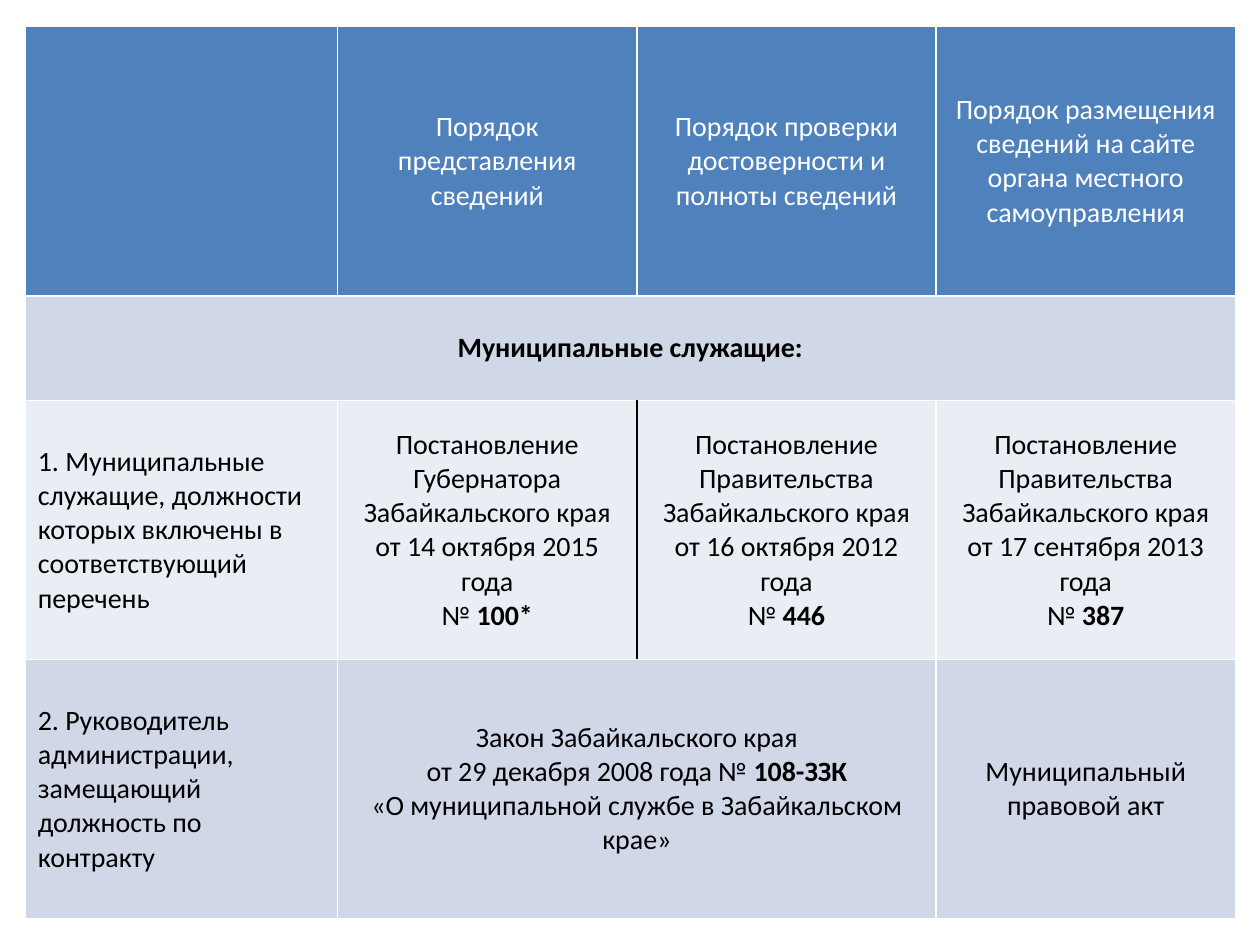
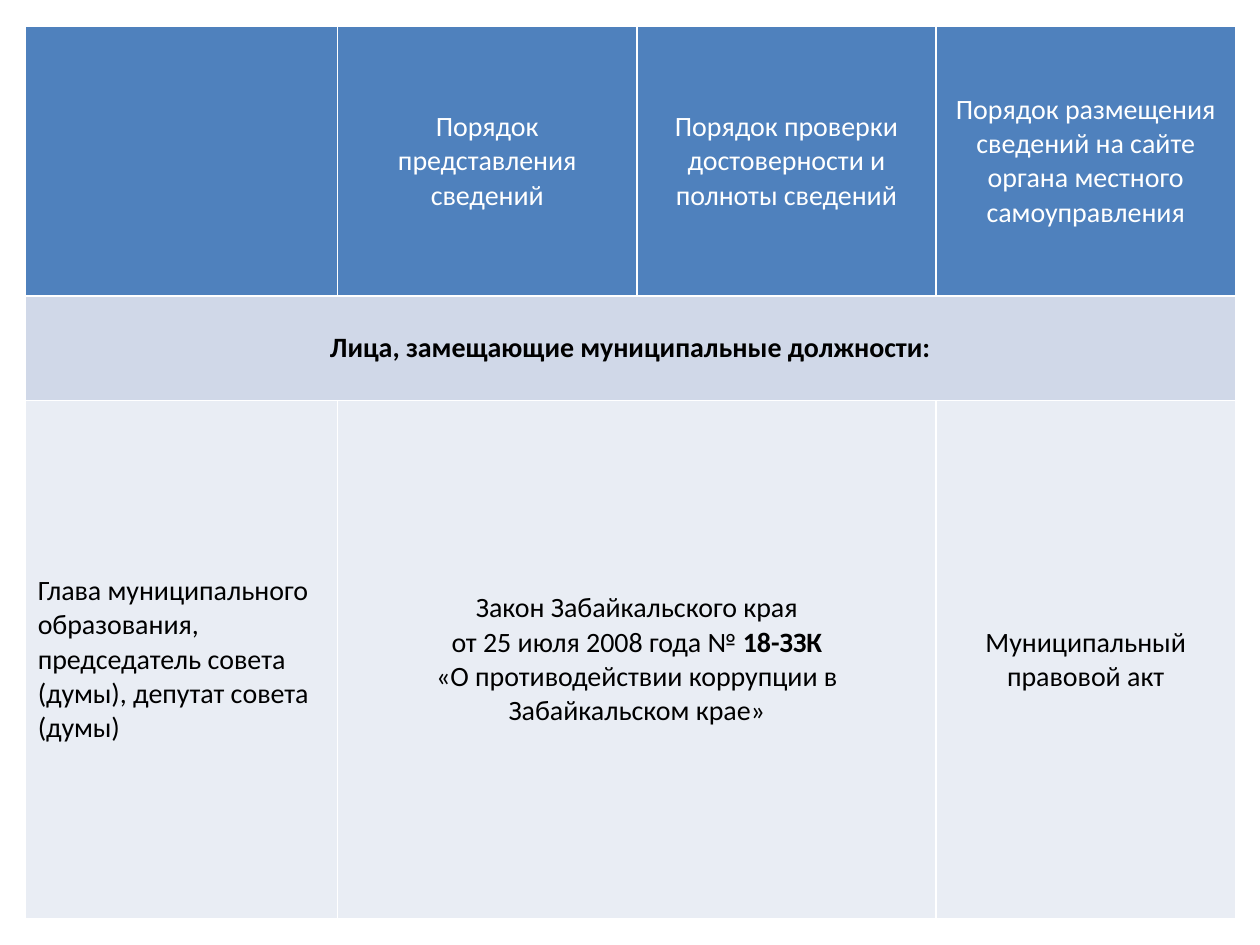
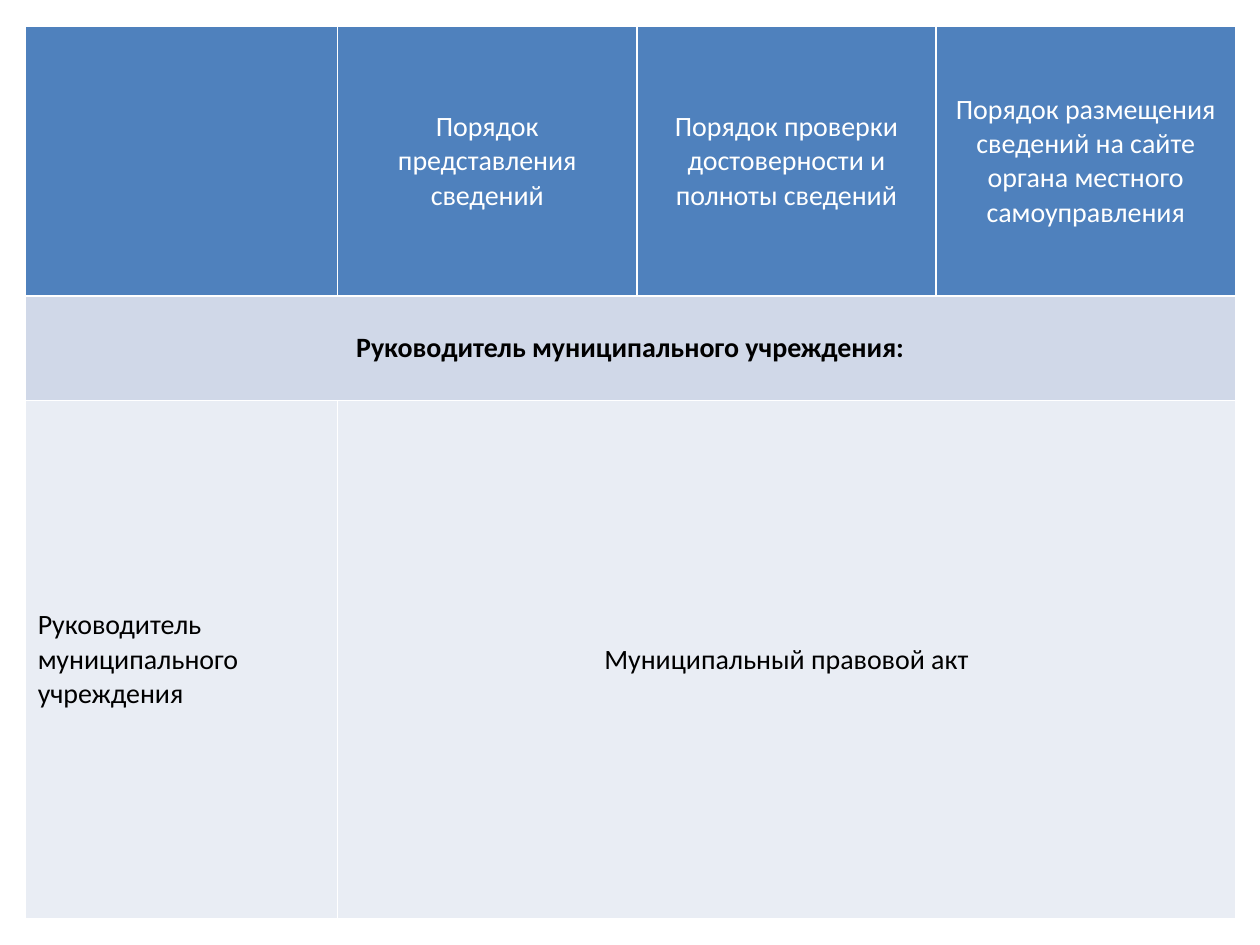
from dataclasses import dataclass

import lxml.etree
import pptx
import pptx.dml.color
import pptx.enum.text
import pptx.oxml.ns
import pptx.presentation
import pptx.table
import pptx.util
from pptx.util import Inches

COLORS = {
    "header": "4F81BD",
    "band_dark": "D0D8E8",
    "band_light": "E9EDF4",
    "white": "FFFFFF",
    "black": "000000",
}
FONT = "Calibri"
FONT_SIZE = pptx.util.Pt(16)
LEFT, TOP = Inches(0.2), Inches(0.21)
COLUMN_WIDTHS = [Inches(2.48)] + [Inches(2.375)] * 3
HEADER_HEIGHT, SECTION_HEIGHT = Inches(2.14), Inches(0.83)
BODY_HEIGHT = Inches(4.11)
CENTER = pptx.enum.text.PP_ALIGN.CENTER
START = pptx.enum.text.PP_ALIGN.LEFT


@dataclass(frozen=True)
class Line:
    """One paragraph: a regular part followed by a bold part."""
    regular: str = ""
    bold: str = ""


@dataclass(frozen=True)
class CellBlock:
    lines: tuple[Line, ...]
    span: int = 1
    align: pptx.enum.text.PP_ALIGN = CENTER


@dataclass(frozen=True)
class TableSlide:
    section: str
    rows: tuple[tuple[CellBlock, ...], ...]
    black_divider: tuple[int, int] | None = None  # row and column left of the line


def person(text: str) -> CellBlock:
    return CellBlock((Line(text),), align=START)


def resolution(issuer: str, date: str, number: str) -> CellBlock:
    return CellBlock((
        Line(f"Постановление {issuer} Забайкальского края"),
        Line(f"от {date} года"),
        Line("№ ", number),
    ))


def regional_law(date: str, number: str, title: str) -> CellBlock:
    return CellBlock((
        Line("Закон Забайкальского края"),
        Line(f"от {date} года № ", number),
        Line(f"«{title}»"),
    ), span=2)


def municipal_act(span: int = 1) -> CellBlock:
    return CellBlock((Line("Муниципальный правовой акт"),), span=span)


HEADER = (CellBlock(()),) + tuple(CellBlock((Line(text),)) for text in (
    "Порядок представления сведений",
    "Порядок проверки достоверности и полноты сведений",
    "Порядок размещения сведений на сайте органа местного самоуправления",
))

SLIDES = (
    TableSlide(
        "Муниципальные служащие:",
        (
            (
                person("1. Муниципальные служащие, должности которых включены "
                       "в соответствующий перечень"),
                resolution("Губернатора", "14 октября 2015", "100*"),
                resolution("Правительства", "16 октября 2012", "446"),
                resolution("Правительства", "17 сентября 2013", "387"),
            ),
            (
                person("2. Руководитель администрации, замещающий должность по контракту"),
                regional_law("29 декабря 2008", "108-ЗЗК",
                             "О муниципальной службе в Забайкальском крае"),
                municipal_act(),
            ),
        ),
        black_divider=(2, 1),
    ),
    TableSlide(
        "Лица, замещающие муниципальные должности:",
        ((
            person("Глава муниципального образования, председатель совета (думы), "
                   "депутат совета (думы)"),
            regional_law("25 июля 2008", "18-ЗЗК",
                         "О противодействии коррупции в Забайкальском крае"),
            municipal_act(),
        ),),
    ),
    TableSlide(
        "Руководитель муниципального учреждения:",
        ((
            person("Руководитель муниципального учреждения"),
            municipal_act(span=3),
        ),),
    ),
)


def add_text(paragraph, text: str, *, color: str, bold: bool = False) -> None:
    run = paragraph.add_run()
    run.text = text
    run.font.name = FONT
    run.font.size = FONT_SIZE
    run.font.bold = bold
    run.font.color.rgb = pptx.dml.color.RGBColor.from_string(COLORS[color])


def set_borders(cell, **colors: str) -> None:
    """Draw 1 pt white borders, with other colors by side: L, R, T, B."""
    properties = cell._tc.get_or_add_tcPr()
    qualified = pptx.oxml.ns.qn
    for side in "LRTB":
        line = lxml.etree.SubElement(properties, qualified(f"a:ln{side}"),
                                     w=str(pptx.util.Pt(1)))
        fill = lxml.etree.SubElement(line, qualified("a:solidFill"))
        lxml.etree.SubElement(fill, qualified("a:srgbClr"),
                              val=COLORS[colors.get(side, "white")])


def fill_row(table: pptx.table.Table, row: int, blocks: tuple[CellBlock, ...],
             *, fill: str, color: str = "black") -> None:
    for cell in table.rows[row].cells:
        cell.fill.solid()
        cell.fill.fore_color.rgb = pptx.dml.color.RGBColor.from_string(COLORS[fill])
    column = 0
    for block in blocks:
        cell = table.cell(row, column)
        if block.span > 1:
            cell.merge(table.cell(row, column + block.span - 1))
        cell.vertical_anchor = pptx.enum.text.MSO_ANCHOR.MIDDLE
        frame = cell.text_frame
        for index, line in enumerate(block.lines):
            paragraph = frame.add_paragraph() if index else frame.paragraphs[0]
            paragraph.alignment = block.align
            if line.regular:
                add_text(paragraph, line.regular, color=color)
            if line.bold:
                add_text(paragraph, line.bold, color=color, bold=True)
        column += block.span


def add_table_slide(presentation: pptx.presentation.Presentation,
                    content: TableSlide) -> None:
    slide = presentation.slides.add_slide(presentation.slide_layouts[6])
    body_count = len(content.rows)
    heights = [HEADER_HEIGHT, SECTION_HEIGHT] + [BODY_HEIGHT // body_count] * body_count
    table = slide.shapes.add_table(len(heights), len(COLUMN_WIDTHS), LEFT, TOP,
                                   sum(COLUMN_WIDTHS), sum(heights)).table
    for column, width in zip(table.columns, COLUMN_WIDTHS):
        column.width = width
    for row_index, height in enumerate(heights):
        table.rows[row_index].height = height
        for column_index, cell in enumerate(table.rows[row_index].cells):
            sides = {}
            if content.black_divider == (row_index, column_index):
                sides["R"] = "black"
            if content.black_divider == (row_index, column_index - 1):
                sides["L"] = "black"
            set_borders(cell, **sides)

    section = CellBlock((Line(bold=content.section),), span=len(COLUMN_WIDTHS))
    fill_row(table, 0, HEADER, fill="header", color="white")
    for row_index, blocks in enumerate(((section,),) + content.rows, start=1):
        fill_row(table, row_index, blocks,
                 fill="band_dark" if row_index % 2 else "band_light")


def main() -> None:
    presentation = pptx.Presentation()
    presentation.slide_width = Inches(10)
    presentation.slide_height = Inches(7.5)
    for content in SLIDES:
        add_table_slide(presentation, content)
    presentation.save("out.pptx")


if __name__ == "__main__":
    main()
